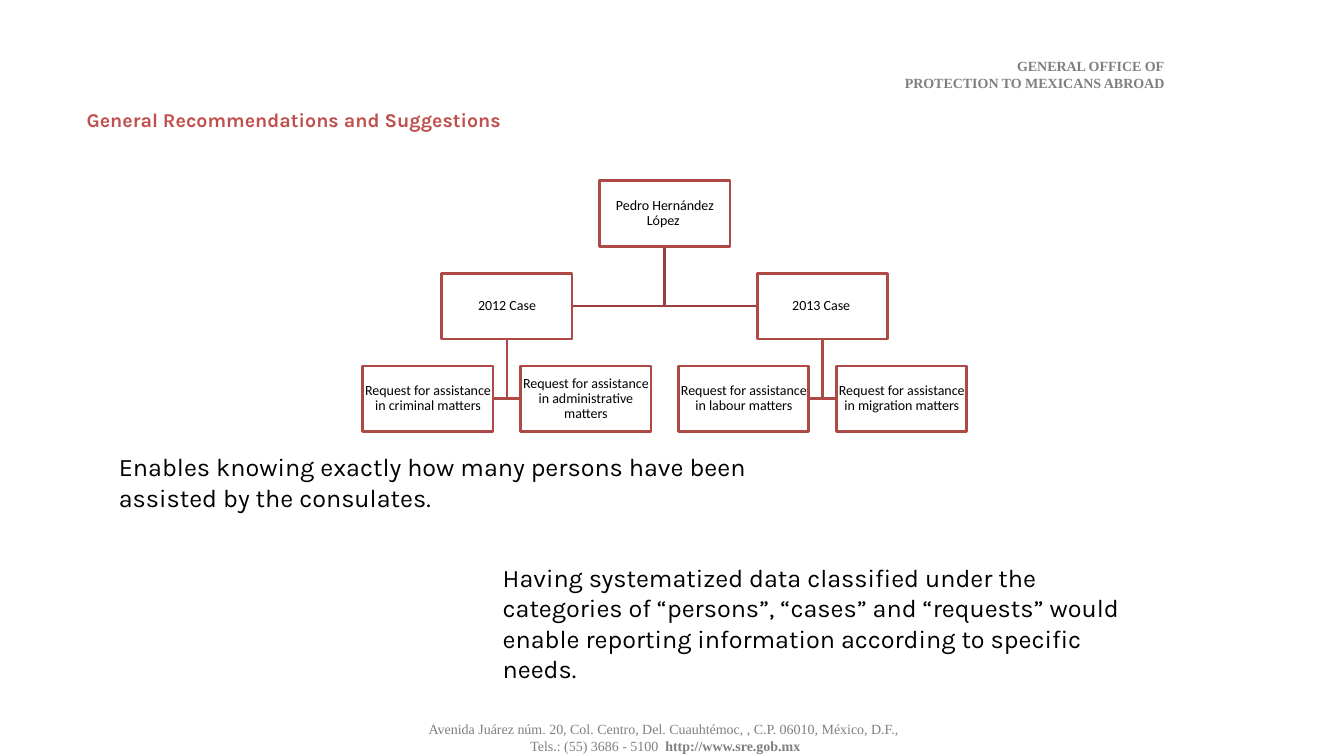
import pptx
import pptx.util
import pptx.dml.color
import pptx.enum.text
import pptx.enum.shapes

Pt = pptx.util.Pt
ALIGN = pptx.enum.text.PP_ALIGN
ANCHOR = pptx.enum.text.MSO_ANCHOR
BOX_W, BOX_H = 93, 47
CASES = {
    "2012 Case": ["Request for assistance in criminal matters",
                  "Request for assistance in administrative matters"],
    "2013 Case ": ["Request for assistance in labour matters",
                   "Request for assistance in migration matters"],
}


def color(value):
    return pptx.dml.color.RGBColor.from_string(value)


def write(p, text, size=10, font="Times New Roman", fill="000000", bold=False,
          align=ALIGN.LEFT, spacing=None):
    """Append text to a paragraph; a newline becomes a line break."""
    p.alignment = align
    p.line_spacing = spacing
    for i, line in enumerate(text.split("\n")):
        if i:
            p.add_line_break()
        r = p.add_run()
        r.text = line
        r.font.size, r.font.name, r.font.bold = Pt(size), font, bold
        r.font.color.rgb = color(fill)


def set_frame(tf, inset=None, anchor=ANCHOR.TOP):
    tf.word_wrap = True
    tf.vertical_anchor = anchor
    if inset is not None:
        tf.margin_left = tf.margin_right = Pt(inset)
        tf.margin_top = tf.margin_bottom = Pt(inset)


def text_box(s, box, inset=None, anchor=ANCHOR.TOP):
    tf = s.shapes.add_textbox(*map(Pt, box)).text_frame
    set_frame(tf, inset, anchor)
    return tf


def node(s, x, y, label):
    sp = s.shapes.add_shape(pptx.enum.shapes.MSO_SHAPE.RECTANGLE,
                            Pt(x), Pt(y), Pt(BOX_W), Pt(BOX_H))
    sp.shadow.inherit = False
    sp.fill.solid()
    sp.fill.fore_color.rgb = color("FFFFFF")
    sp.line.color.rgb = color("AE4946")
    sp.line.width = Pt(2)
    set_frame(sp.text_frame, 0.5, ANCHOR.MIDDLE)
    write(sp.text_frame.paragraphs[0], label, font="Calibri",
          align=ALIGN.CENTER, spacing=0.9)


def branch(s, parent, child, line):
    """Elbow from the bottom of a parent to the facing side of its child."""
    x, y = parent[0] + BOX_W / 2, parent[1] + BOX_H
    end_x = child[0] + (BOX_W if child[0] < parent[0] else 0)
    end_y = child[1] + BOX_H / 2
    fb = s.shapes.build_freeform(Pt(x), Pt(y))
    fb.add_line_segments([(Pt(x), Pt(end_y)), (Pt(end_x), Pt(end_y))], close=False)
    sp = fb.convert_to_shape()
    sp.shadow.inherit = False
    sp.fill.background()
    sp.line.color.rgb = color(line)
    sp.line.width = Pt(2)


def header(s, box):
    tf = text_box(s, box, 0, ANCHOR.MIDDLE)
    write(tf.paragraphs[0], "GENERAL OFFICE OF\nPROTECTION TO MEXICANS ABROAD",
          fill="7F7F7F", bold=True, align=ALIGN.RIGHT)


def title(s, box):
    p = text_box(s, box).paragraphs[0]
    p.space_after = Pt(6)
    write(p, "General Recommendations and Suggestions", size=14, font="Karla",
          fill="C0504D", bold=True, align=ALIGN.JUSTIFY)


def case_tree(s, box):
    left, top, width, height = box
    col = (width - BOX_W) / 3
    row = (height - BOX_H) / 2

    # Positions: each parent is centred over its children
    root = (left + 1.5 * col, top)
    nodes = [(root, "Pedro Hernández López ")]
    links = []
    for i, (case, requests) in enumerate(CASES.items()):
        parent = (left + (2 * i + 0.5) * col, top + row)
        nodes.append((parent, case))
        links.append((root, parent, "9A403E"))
        for j, request in enumerate(requests):
            child = (left + (2 * i + j) * col, top + 2 * row)
            nodes.append((child, request))
            links.append((parent, child, "AE4946"))

    # Branches lie behind the boxes
    for link in links:
        branch(s, *link)
    for (x, y), label in nodes:
        node(s, x, y, label)


def statement(s, box, text):
    write(text_box(s, box).paragraphs[0], text, size=18, font="Karla")


def footer(s, box):
    tf = text_box(s, box, anchor=ANCHOR.MIDDLE)
    fmt = dict(fill="808080", align=ALIGN.CENTER)
    write(tf.paragraphs[0], "Avenida Juárez núm. 20, Col. Centro, Del. Cuauhtémoc, , "
          "C.P. 06010, México, D.F., ", **fmt)
    p = tf.add_paragraph()
    write(p, "Tels.: (55) 3686 - 5100  ", **fmt)
    write(p, "http://www.sre.gob.mx", bold=True, **fmt)


def main():
    prs = pptx.Presentation()
    prs.slide_width, prs.slide_height = Pt(960), Pt(540)
    s = prs.slides.add_slide(prs.slide_layouts[6])
    footer(s, (248.4, 512.6, 453.6, 28.8))
    title(s, (54.7, 73.4, 756.7, 49.7))
    case_tree(s, (259.2, 128.9, 431.4, 179.5))
    statement(s, (77.8, 319, 480.2, 51),
              "Enables knowing exactly how many persons have been assisted by the consulates.")
    statement(s, (352, 398.2, 480.2, 72.7),
              "Having systematized data classified under the categories of “persons”, "
              "“cases” and “requests” would enable reporting information according to "
              "specific needs.")
    header(s, (538.6, 41, 293, 24.5))
    prs.save("out.pptx")


if __name__ == "__main__":
    main()
